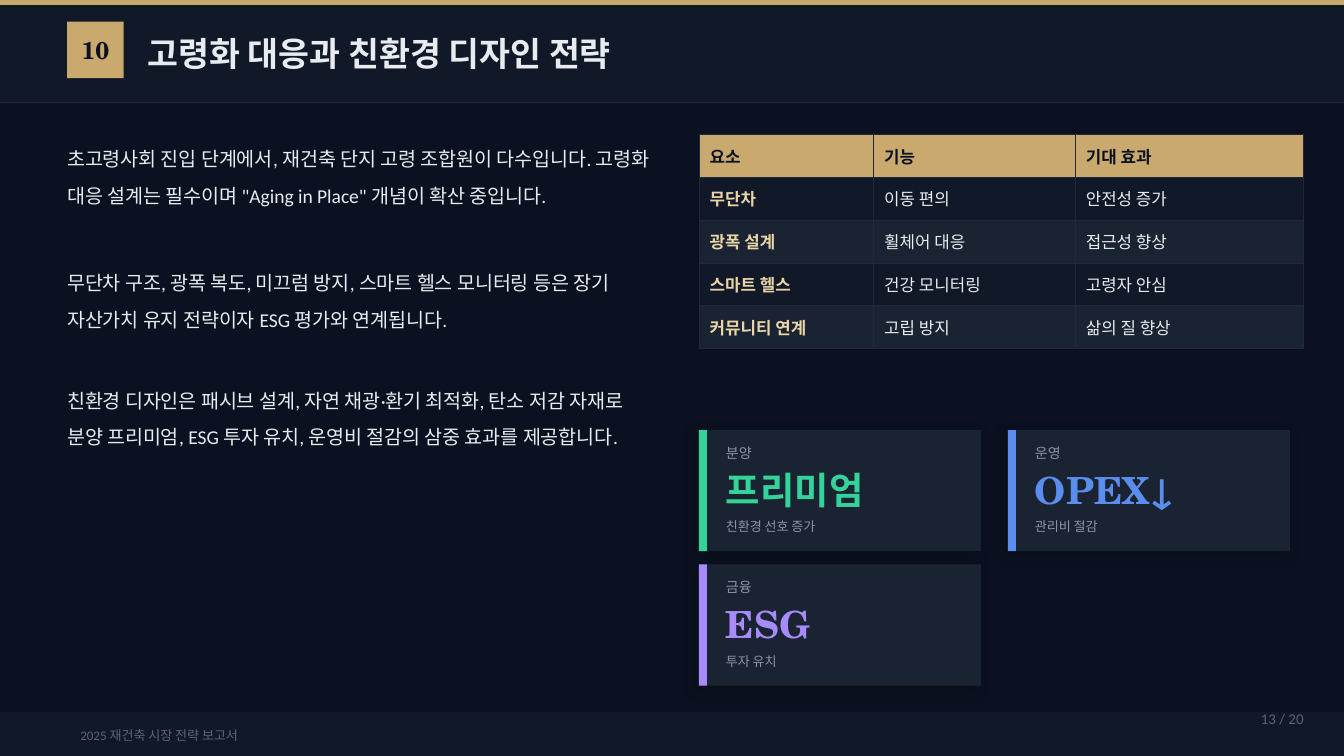
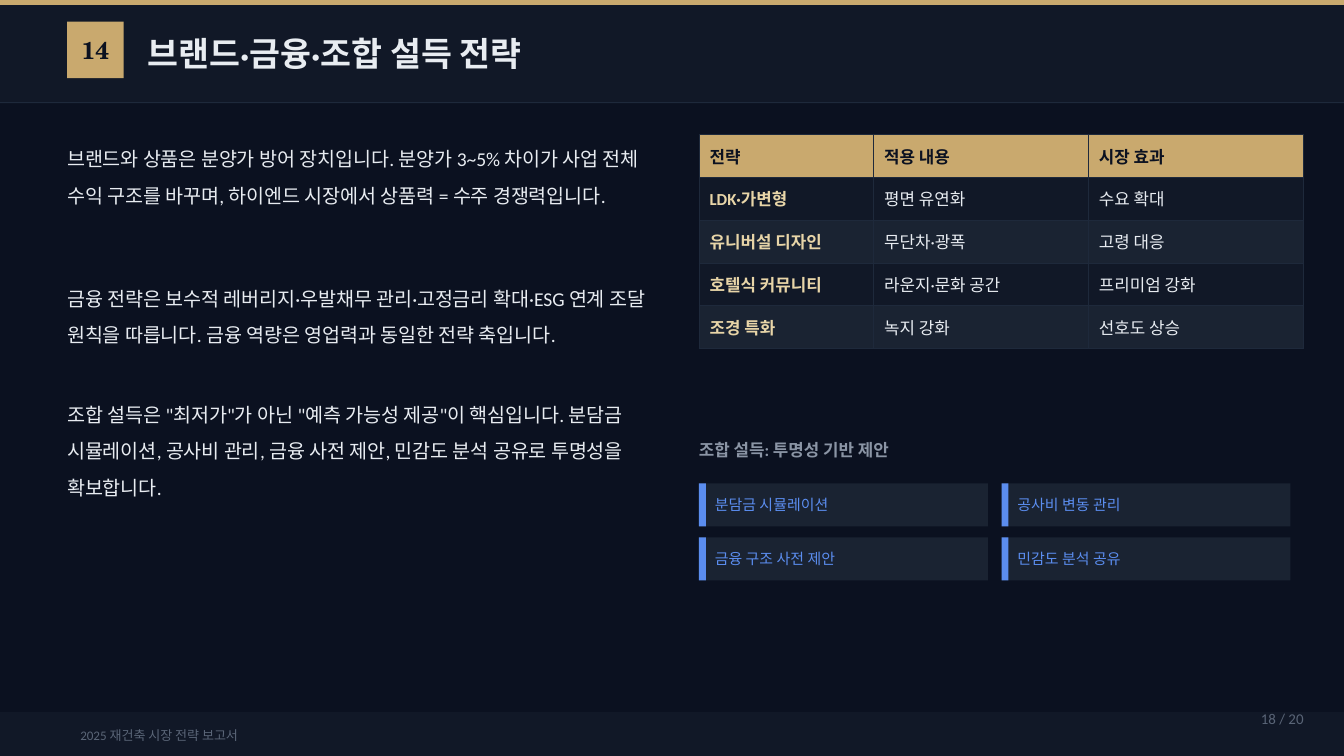
from lxml.etree import SubElement
from pptx import Presentation
from pptx.dml.color import RGBColor
from pptx.enum.shapes import MSO_SHAPE
from pptx.enum.text import MSO_ANCHOR, PP_ALIGN
from pptx.oxml import parse_xml
from pptx.oxml.ns import nsdecls, qn
from pptx.util import Cm, Pt

NAVY = RGBColor(0x0B, 0x11, 0x20)
BAND = RGBColor(0x11, 0x18, 0x27)
PANEL = RGBColor(0x1A, 0x23, 0x32)
RULE = RGBColor(0x1E, 0x29, 0x3B)
GOLD = RGBColor(0xC9, 0xA9, 0x6E)
PALE_GOLD = RGBColor(0xE8, 0xD5, 0xA8)
WHITE = RGBColor(0xE8, 0xEC, 0xF1)
GREY = RGBColor(0x8B, 0x95, 0xA5)
DIM = RGBColor(0x5A, 0x65, 0x77)
GREEN = RGBColor(0x34, 0xD3, 0x99)
BLUE = RGBColor(0x5B, 0x8D, 0xEF)
PURPLE = RGBColor(0xA7, 0x8B, 0xFA)

SERIF, SANS = "TeX Gyre Schola", "Calibri"
NUMBER = {"name": SERIF, "size": Pt(13), "bold": True}
TITLE = {"name": SERIF, "size": Pt(18), "bold": True}
BODY = {"name": SANS, "size": Pt(10.5)}
CELL = {"name": SANS, "size": Pt(9), "bold": False}
STRONG = {**CELL, "bold": True}
CARD_LABEL = {"name": SANS, "size": Pt(7.5)}
CARD_VALUE = {"name": SERIF, "size": Pt(20), "bold": True}
SMALL = {"name": SANS, "size": Pt(7)}
ITEM = {"name": SANS, "size": Pt(8)}

WIDTH, HEIGHT = 25.4, 14.29
MARGIN, CONTENT_TOP, RIGHT_COLUMN = 1.27, 2.54, 13.21
ROW_HEIGHT = 0.81

PAGES = [
    {
        "number": "10",
        "title": "고령화 대응과 친환경 디자인 전략",
        "page": "13 / 20",
        "body": [
            (2.54, 1.52, '초고령사회 진입 단계에서, 재건축 단지 고령 조합원이 다수입니다. '
                         '고령화 대응 설계는 필수이며 "Aging in Place" 개념이 확산 중입니다.'),
            (4.88, 1.52, "무단차 구조, 광폭 복도, 미끄럼 방지, 스마트 헬스 모니터링 등은 장기 "
                         "자산가치 유지 전략이자 ESG 평가와 연계됩니다."),
            (7.11, 1.65, "친환경 디자인은 패시브 설계, 자연 채광·환기 최적화, 탄소 저감 자재로 "
                         "분양 프리미엄, ESG 투자 유치, 운영비 절감의 삼중 효과를 제공합니다."),
        ],
        "columns": [3.3, 3.81, 4.32],
        "rows": [
            ("요소", "기능", "기대 효과"),
            ("무단차", "이동 편의", "안전성 증가"),
            ("광폭 설계", "휠체어 대응", "접근성 향상"),
            ("스마트 헬스", "건강 모니터링", "고령자 안심"),
            ("커뮤니티 연계", "고립 방지", "삶의 질 향상"),
        ],
        "cards": [
            ("분양", "프리미엄", "친환경 선호 증가", GREEN),
            ("운영", "OPEX↓", "관리비 절감", BLUE),
            ("금융", "ESG", "투자 유치", PURPLE),
        ],
    },
    {
        "number": "14",
        "title": "브랜드·금융·조합 설득 전략",
        "page": "18 / 20",
        "body": [
            (2.54, 1.52, "브랜드와 상품은 분양가 방어 장치입니다. 분양가 3~5% 차이가 사업 전체 "
                         "수익 구조를 바꾸며, 하이엔드 시장에서 상품력 = 수주 경쟁력입니다."),
            (5.18, 1.52, "금융 전략은 보수적 레버리지·우발채무 관리·고정금리 확대·ESG 연계 "
                         "조달 원칙을 따릅니다. 금융 역량은 영업력과 동일한 전략 축입니다."),
            (7.37, 1.78, '조합 설득은 "최저가"가 아닌 "예측 가능성 제공"이 핵심입니다. '
                         "분담금 시뮬레이션, 공사비 관리, 금융 사전 제안, 민감도 분석 공유로 "
                         "투명성을 확보합니다."),
        ],
        "columns": [3.3, 4.06, 4.06],
        "rows": [
            ("전략", "적용 내용", "시장 효과"),
            ("LDK·가변형", "평면 유연화", "수요 확대"),
            ("유니버설 디자인", "무단차·광폭", "고령 대응"),
            ("호텔식 커뮤니티", "라운지·문화 공간", "프리미엄 강화"),
            ("조경 특화", "녹지 강화", "선호도 상승"),
        ],
        "heading": "조합 설득: 투명성 기반 제안",
        "items": ["분담금 시뮬레이션", "공사비 변동 관리", "금융 구조 사전 제안", "민감도 분석 공유"],
    },
]


def add_box(slide, left, top, width, height, color):
    shape = slide.shapes.add_shape(
        MSO_SHAPE.RECTANGLE, Cm(left), Cm(top), Cm(width), Cm(height))
    shape.shadow.inherit = False
    shape.fill.solid()
    shape.fill.fore_color.rgb = color
    shape.line.fill.background()
    return shape


def add_label(slide, left, top, width, height, text, style, color,
              align=PP_ALIGN.LEFT, anchor=MSO_ANCHOR.MIDDLE, inset=(0, 0)):
    frame = slide.shapes.add_textbox(
        Cm(left), Cm(top), Cm(width), Cm(height)).text_frame
    frame.word_wrap = True
    frame.vertical_anchor = anchor
    frame.margin_left = frame.margin_right = Cm(inset[0])
    frame.margin_top = frame.margin_bottom = Cm(inset[1])
    paragraph = frame.paragraphs[0]
    paragraph.alignment = align
    run = paragraph.add_run()
    run.text = text
    for name, value in style.items():
        setattr(run.font, name, value)
    run.font.color.rgb = color
    return paragraph


presentation = Presentation()
presentation.slide_width, presentation.slide_height = Cm(WIDTH), Cm(HEIGHT)

for page in PAGES:
    slide = presentation.slides.add_slide(presentation.slide_layouts[6])
    slide.background.fill.solid()
    slide.background.fill.fore_color.rgb = NAVY

    # Header
    add_box(slide, 0, 0, WIDTH, 0.1, GOLD)
    add_box(slide, 0, 0.1, WIDTH, 1.83, BAND)
    badge = (MARGIN, 0.41, 1.07, 1.07)
    add_box(slide, *badge, GOLD)
    add_label(slide, *badge, page["number"], NUMBER, NAVY, align=PP_ALIGN.CENTER)
    add_label(slide, 2.79, 0.3, 21.34, 1.4, page["title"], TITLE, WHITE)
    add_box(slide, 0, 1.93, WIDTH, 0.02, RULE)

    # Body text
    for top, height, text in page["body"]:
        paragraph = add_label(slide, MARGIN, top, 11.18, height, text, BODY, WHITE,
                              anchor=MSO_ANCHOR.TOP)
        paragraph.line_spacing = 1.55

    # Table
    rows, columns = page["rows"], page["columns"]
    table = slide.shapes.add_table(
        len(rows), len(columns), Cm(RIGHT_COLUMN), Cm(CONTENT_TOP),
        Cm(sum(columns)), Cm(ROW_HEIGHT * len(rows))).table
    for column, width in zip(table.columns, columns):
        column.width = Cm(width)
    for row_index, texts in enumerate(rows):
        table.rows[row_index].height = Cm(ROW_HEIGHT)
        for column_index, text in enumerate(texts):
            if row_index == 0:
                fill, style, color = GOLD, STRONG, NAVY
            else:
                fill = BAND if row_index % 2 else PANEL
                style, color = (CELL, WHITE) if column_index else (STRONG, PALE_GOLD)
            cell = table.cell(row_index, column_index)
            cell.fill.solid()
            cell.fill.fore_color.rgb = fill
            cell.vertical_anchor = MSO_ANCHOR.MIDDLE
            cell.margin_left = cell.margin_right = Cm(0.2)
            cell.margin_top = cell.margin_bottom = Cm(0.15)
            run = cell.text_frame.paragraphs[0].add_run()
            run.text = text
            for name, value in style.items():
                setattr(run.font, name, value)
            run.font.color.rgb = color
            properties = cell._tc.get_or_add_tcPr()
            for position, side in enumerate(("lnL", "lnR", "lnT", "lnB")):
                properties.insert(position, parse_xml(
                    f'<a:{side} {nsdecls("a")} w="{Pt(0.5)}"><a:solidFill>'
                    f'<a:srgbClr val="{RULE}"/></a:solidFill></a:{side}>'))

    # Result cards, two to a row
    for index, (label, value, note, accent) in enumerate(page.get("cards", [])):
        left = RIGHT_COLUMN + index % 2 * 5.84
        top = 8.13 + index // 2 * 2.54
        card = add_box(slide, left, top, 5.33, 2.29, PANEL)
        effects = card._element.spPr.find(qn("a:effectLst"))
        shadow = SubElement(effects, qn("a:outerShdw"), blurRad=str(Pt(8)),
                            dist=str(Pt(3)), dir="8100000", algn="bl", rotWithShape="0")
        black = SubElement(shadow, qn("a:srgbClr"), val="000000")
        SubElement(black, qn("a:alpha"), val="20000")
        add_box(slide, left, top, 0.15, 2.29, accent)
        for offset, height, text, style, color in (
                (0.15, 0.56, label, CARD_LABEL, GREY),
                (0.66, 0.91, value, CARD_VALUE, accent),
                (1.57, 0.51, note, SMALL, GREY)):
            add_label(slide, left + 0.51, top + offset, 4.57, height, text, style, color)

    # Proposal items, two to a row
    if "heading" in page:
        add_label(slide, RIGHT_COLUMN, 8.13, 11.43, 0.76, page["heading"], STRONG, GREY)
    for index, text in enumerate(page.get("items", [])):
        left = RIGHT_COLUMN + index % 2 * 5.72
        top = 9.14 + index // 2 * 1.02
        add_box(slide, left, top, 5.46, ROW_HEIGHT, PANEL)
        add_box(slide, left, top, 0.13, ROW_HEIGHT, BLUE)
        add_label(slide, left + 0.3, top, 4.95, ROW_HEIGHT, text, ITEM, BLUE)

    # Footer
    add_box(slide, 0, 13.46, WIDTH, 0.83, BAND)
    add_label(slide, MARGIN, 13.54, 10.16, 0.71, "2025 재건축 시장 전략 보고서",
              SMALL, DIM, inset=(0.25, 0.13))
    add_label(slide, 22.35, 13.21, 2.54, 0.76, page["page"], ITEM, DIM,
              align=PP_ALIGN.RIGHT, inset=(0.25, 0.13))

presentation.save("out.pptx")
